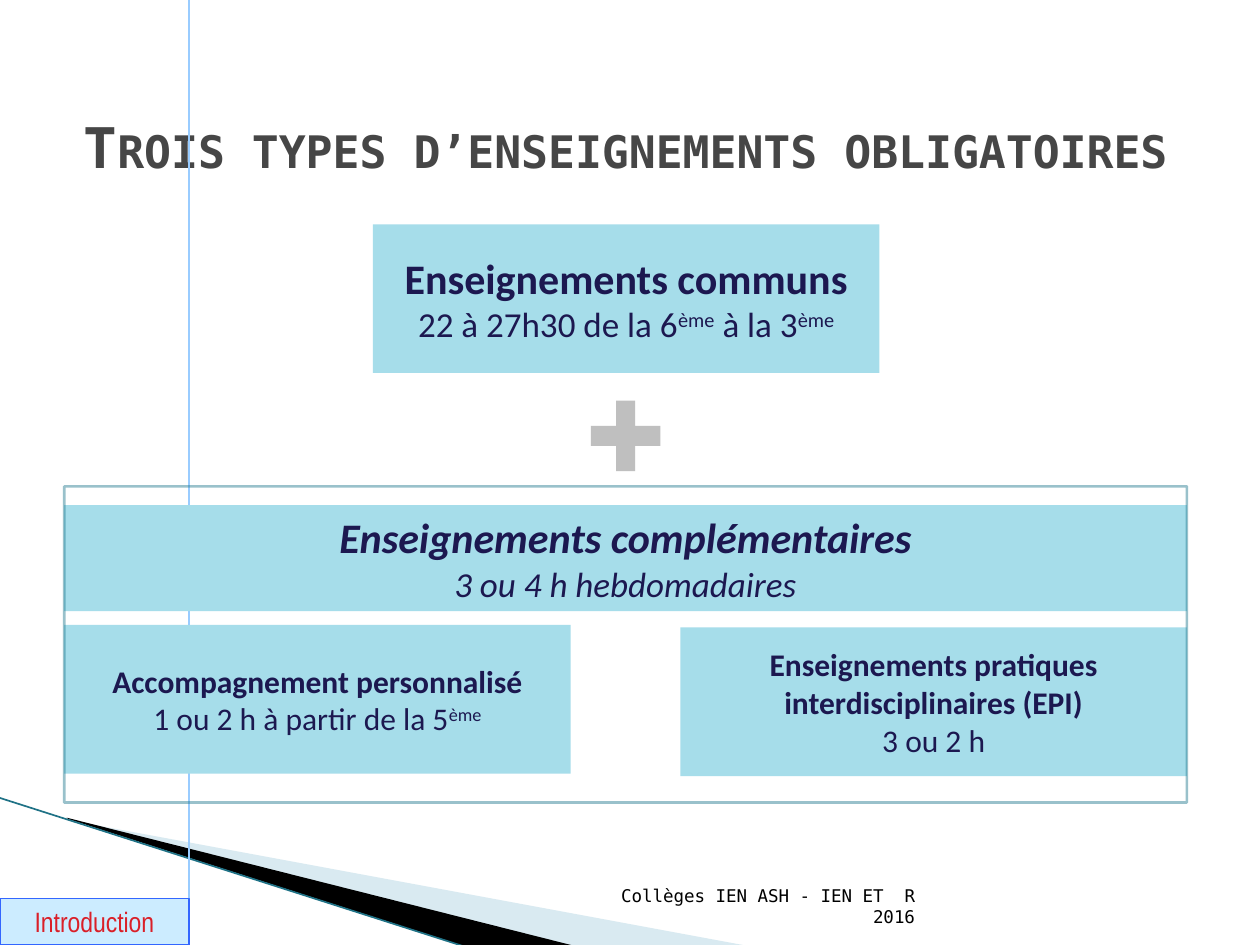
from lxml.etree import SubElement
from pptx import Presentation
from pptx.dml.color import RGBColor
from pptx.enum.shapes import MSO_CONNECTOR as CONN, MSO_SHAPE as SHAPE
from pptx.enum.text import MSO_ANCHOR as ANCHOR, PP_ALIGN as ALIGN
from pptx.oxml.ns import qn
from pptx.util import Inches, Pt

THEME = {
    "body": "Calibri", "mono": "DejaVu Sans Mono", "label": "Arial Narrow",
    "ink": "1C1850", "box": "A6DDEA", "frame": "227A8F", "plus": "BFBFBF",
    "title": "464646", "black": "000000", "pale": "A0CBDC", "edge": "1F7286",
    "guide": "99CCFF", "tag": "CCECFF", "tag_line": "3366FF", "tag_text": "DA1F28",
    "title_size": 32, "head": 24, "sub": 20, "small": 18, "tag_size": 16, "foot": 10,
}

LEFT, FULL_W, BOX_W, BOX_H = 0.51, 8.91, 4.02, 1.18
RIGHT = LEFT + FULL_W - BOX_W
MARGIN = 1.5

TITLE = "Trois types d’enseignements obligatoires"
FOOTER = "Collèges IEN ASH - IEN ET  R 2016"
TAG = "Introduction"

BOXES = [
    {"at": (2.96, 1.78, BOX_W, BOX_H), "head": "Enseignements communs",
     "sub": ["22 à 27h30 de la 6", "^ème", " à la 3", "^ème"],
     "sizes": ("head", "sub")},
    {"at": (RIGHT, 4.98, BOX_W, BOX_H),
     "head": "Enseignements pratiques interdisciplinaires (EPI)",
     "sub": ["3 ou 2 h"], "sizes": ("small", "small")},
    {"at": (LEFT, 4.96, BOX_W, BOX_H), "head": "Accompagnement personnalisé",
     "sub": ["1 ou 2 h à partir de la 5", "^ème"], "sizes": ("small", "small")},
    {"at": (LEFT, 4.01, FULL_W, 0.84), "head": "Enseignements complémentaires",
     "sub": ["3 ou 4 h hebdomadaires"], "sizes": ("head", "sub"), "italic": True},
]

WEDGES = [
    ([(0.55, 6.51), (5.95, 7.51), (4.56, 7.51), (0.55, 6.5)], "pale", 40),
    ([(0.53, 6.49), (4.57, 7.51), (3.72, 7.52), (0.54, 6.5)], "black", 100),
]
LINES = [
    ((-0.01, 6.33), (3.71, 7.52), "edge", 0.95),
    ((MARGIN, 0), (MARGIN, 7.5), "guide", 0.75),
]


def rgb(key):
    return RGBColor.from_string(THEME[key])


def set_alpha(sp, percent):
    color = next(sp._element.spPr.iter(qn("a:srgbClr")))
    SubElement(color, qn("a:alpha")).set("val", str(percent * 1000))


def paint(sp, fill=None, line=None, width=0.75):
    sp.shadow.inherit = False
    if fill:
        sp.fill.solid()
        sp.fill.fore_color.rgb = rgb(fill)
    else:
        sp.fill.background()
    if line:
        sp.line.color.rgb = rgb(line)
        sp.line.width = Pt(width)
    else:
        sp.line.fill.background()


def add_shape(s, kind, at, **style):
    sp = s.shapes.add_shape(kind, *map(Inches, at))
    paint(sp, **style)
    return sp


def frame_text(sp, anchor):
    tf = sp.text_frame
    tf.word_wrap = True
    tf.vertical_anchor = anchor
    return tf


def add_run(p, text, font, size, color, bold=False, italic=False):
    r = p.add_run()
    r.text = text.lstrip("^")
    r.font.name = THEME[font]
    r.font.size = Pt(THEME[size])
    r.font.color.rgb = rgb(color)
    r.font.bold, r.font.italic = bold, italic
    if text.startswith("^"):
        r.font._element.set("baseline", "30000")
    return r


def add_line(s, start, end, color, width):
    c = s.shapes.add_connector(CONN.STRAIGHT, *map(Inches, start + end))
    c.line.color.rgb = rgb(color)
    c.line.width = Pt(width)
    SubElement(c._element.spPr, qn("a:effectLst"))


def add_wedge(s, points, color, opacity):
    first, *rest = [tuple(map(Inches, point)) for point in points]
    builder = s.shapes.build_freeform(*first, scale=1.0)
    builder.add_line_segments(rest, close=True)
    sp = builder.convert_to_shape()
    paint(sp, fill=color)
    if opacity < 100:
        set_alpha(sp, opacity)


def add_box(s, box):
    tf = frame_text(add_shape(s, SHAPE.RECTANGLE, box["at"], fill="box"), ANCHOR.MIDDLE)
    italic = box.get("italic", False)
    head_size, sub_size = box["sizes"]
    p = tf.paragraphs[0]
    p.alignment = ALIGN.CENTER
    add_run(p, box["head"], "body", head_size, "ink", True, italic)
    p = tf.add_paragraph()
    p.alignment = ALIGN.CENTER
    for text in box["sub"]:
        add_run(p, text, "body", sub_size, "ink", False, italic)


def add_title(s):
    sp = s.shapes.title
    sp.left, sp.top, sp.width, sp.height = map(Inches, (LEFT, 0.84, FULL_W, 0.94))
    p = frame_text(sp, ANCHOR.TOP).paragraphs[0]
    p.alignment = ALIGN.CENTER
    r = add_run(p, TITLE, "mono", "title_size", "title", True)
    r.font._element.set("cap", "small")


def main():
    prs = Presentation()
    prs.slide_width, prs.slide_height = Inches(10), Inches(7.5)
    s = prs.slides.add_slide(prs.slide_layouts[5])

    add_title(s)
    for wedge in WEDGES:
        add_wedge(s, *wedge)
    for line in LINES:
        add_line(s, *line)
    for box in BOXES:
        add_box(s, box)

    frame = add_shape(s, SHAPE.RECTANGLE, (LEFT, 3.86, FULL_W, 2.51), line="frame", width=1.5)
    set_alpha(frame, 45)
    plus = add_shape(s, SHAPE.CROSS, (4.69, 3.18, 0.55, 0.56), fill="plus")
    plus.adjustments[0] = 0.363

    footer = s.shapes.add_textbox(*map(Inches, (4.79, 7.01, 2.57, 0.4)))
    p = frame_text(footer, ANCHOR.BOTTOM).paragraphs[0]
    p.alignment = ALIGN.RIGHT
    add_run(p, FOOTER, "mono", "foot", "black")

    tag = add_shape(s, SHAPE.RECTANGLE, (0, 7.13, MARGIN, 0.37), fill="tag", line="tag_line")
    p = frame_text(tag, ANCHOR.MIDDLE).paragraphs[0]
    p.alignment = ALIGN.CENTER
    add_run(p, TAG, "label", "tag_size", "tag_text")

    prs.save("out.pptx")


if __name__ == "__main__":
    main()
